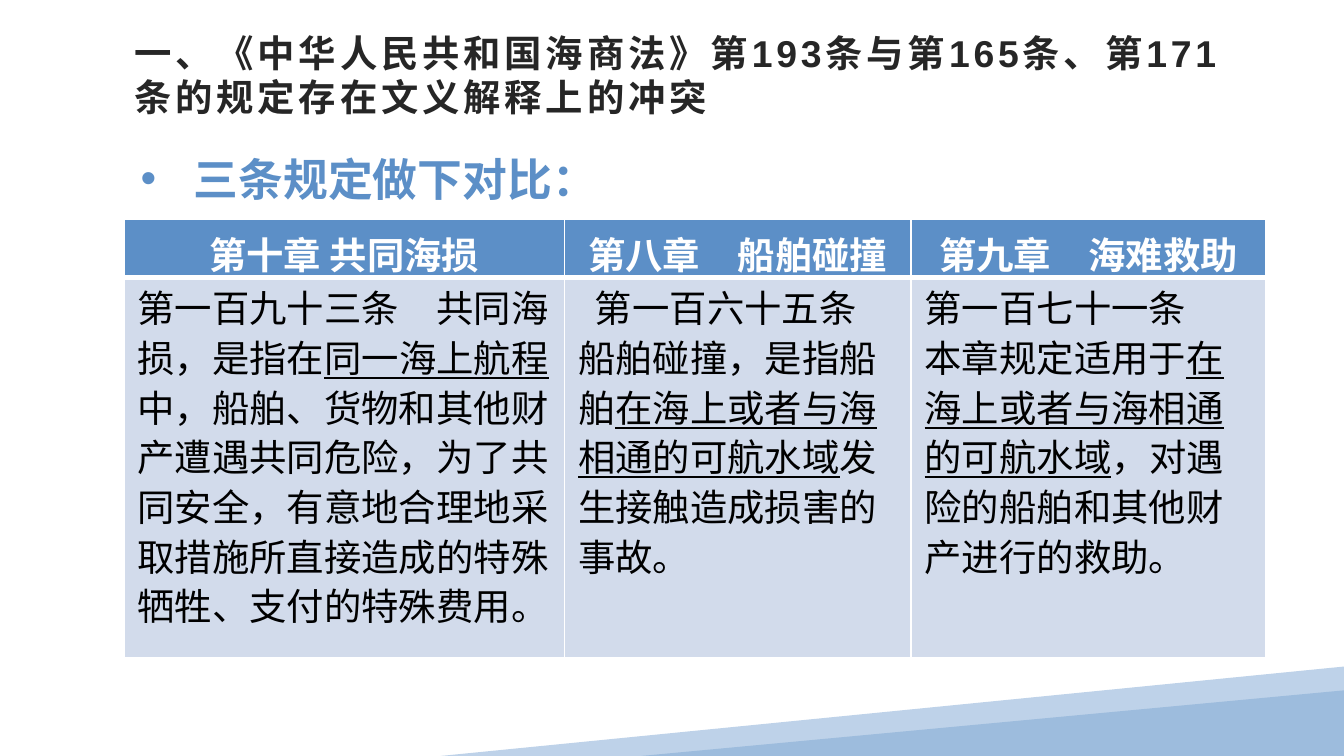
from dataclasses import dataclass

from lxml import etree
from pptx import Presentation
from pptx import util as u
from pptx.dml.color import RGBColor
from pptx.enum import shapes, text
from pptx.oxml import ns
from pptx.util import Cm, Pt


@dataclass(frozen=True)
class Theme:
    latin: str = "Arial"
    cjk: str = "Noto Sans CJK SC"
    title: str = "262626"
    accent: str = "5C8FC7"
    body_fill: str = "D2DBEB"
    wave_light: str = "BED2E9"
    wave_dark: str = "9DBCDD"
    white: str = "FFFFFF"
    black: str = "000000"
    text_size: u.Length = Pt(20)
    lead_size: u.Length = Pt(24)
    body_leading: u.Length = Pt(26.6)


THEME = Theme()


@dataclass(frozen=True)
class Article:
    chapter: str
    before: str
    scope: str  # underlined wording
    after: str
    width: u.Length
    first_indent: u.Length = Cm(0)


ARTICLES = [
    Article("第十章 共同海损", "第一百九十三条　共同海损，是指在", "同一海上航程",
            "中，船舶、货物和其他财产遭遇共同危险，为了共同安全，有意地合理地"
            "采取措施所直接造成的特殊牺牲、支付的特殊费用。", Cm(8.33)),
    Article("第八章　船舶碰撞", "第一百六十五条　船舶碰撞，是指船舶",
            "在海上或者与海相通的可航水域", "发生接触造成损害的事故。",
            Cm(6.55), Cm(0.32)),
    Article("第九章　海难救助", "第一百七十一条　本章规定适用于",
            "在海上或者与海相通的可航水域", "，对遇险的船舶和其他财产进行的救助。",
            Cm(6.71)),
]


def add_run(paragraph, words: str, size: u.Length, color: str, bold: bool = False,
            underline: bool = False, font: str = THEME.cjk):
    run = paragraph.add_run()
    run.text = words
    run.font.size, run.font.bold, run.font.underline = size, bold, underline
    run.font.color.rgb = RGBColor.from_string(color)
    run.font.name = font
    east_asian = etree.Element(ns.qn("a:ea"), typeface=THEME.cjk)
    run.font._element.find(ns.qn("a:latin")).addnext(east_asian)
    return run


def paint(shape, color: str) -> None:
    shape.shadow.inherit = False
    shape.fill.solid()
    shape.fill.fore_color.rgb = RGBColor.from_string(color)
    shape.line.fill.background()


def style_cell(cell, fill: str, top: float, bottom: float) -> None:
    cell.fill.solid()
    cell.fill.fore_color.rgb = RGBColor.from_string(fill)
    props = cell._tc.get_or_add_tcPr()
    sides = {"lnL": 1, "lnR": 1, "lnT": top, "lnB": bottom}
    for place, (side, points) in enumerate(sides.items()):
        border = etree.Element(ns.qn(f"a:{side}"), w=str(Pt(points)))
        solid = etree.SubElement(border, ns.qn("a:solidFill"))
        etree.SubElement(solid, ns.qn("a:srgbClr"), val=THEME.white)
        props.insert(place, border)


def add_wave(slide) -> None:
    builder = slide.shapes.build_freeform(Cm(25.4), Cm(12.6))
    builder.add_line_segments([(Cm(25.4), Cm(14.17)), (Cm(17.09), Cm(14.29)),
                               (Cm(8.33), Cm(14.29))], close=True)
    paint(builder.convert_to_shape(), THEME.wave_light)
    front = slide.shapes.add_shape(shapes.MSO_SHAPE.ISOSCELES_TRIANGLE,
                                   Cm(12.12), Cm(13.05), Cm(13.28), Cm(1.24))
    front.adjustments[0] = 1
    paint(front, THEME.wave_dark)


def add_title(slide) -> None:
    frame = slide.shapes.add_textbox(Cm(2.26), Cm(0.51), Cm(21.67), Cm(1.83)).text_frame
    frame.word_wrap = True
    frame.vertical_anchor = text.MSO_ANCHOR.MIDDLE
    frame.margin_left, frame.margin_right = Cm(0.28), Cm(0.2)
    frame.margin_top = frame.margin_bottom = Cm(0.1)
    heading = frame.paragraphs[0]
    heading.line_spacing = Pt(23.6)
    run = add_run(heading, "一、《中华人民共和国海商法》第193条与第165条、第171条的规定存在文义解释上的冲突",
                  THEME.text_size, THEME.title, bold=True, font=THEME.latin)
    run.font._element.set("spc", "200")


def add_lead(slide) -> None:
    frame = slide.shapes.add_textbox(Cm(1.63), Cm(2.74), Cm(9.91), Cm(1.27)).text_frame
    frame.word_wrap = False
    lead = frame.paragraphs[0]
    lead.alignment = text.PP_ALIGN.LEFT
    props = lead._p.get_or_add_pPr()
    props.set("marL", str(Cm(1.78)))
    props.set("indent", str(-Cm(1)))
    etree.SubElement(props, ns.qn("a:buFont"), typeface=THEME.latin)
    etree.SubElement(props, ns.qn("a:buChar"), char="•")
    add_run(lead, "三条规定做下对比：", THEME.lead_size, THEME.accent, bold=True)


def add_comparison(slide, articles: list[Article]) -> None:
    width = sum(article.width for article in articles)
    table = slide.shapes.add_table(2, len(articles), Cm(2.34), Cm(4.14),
                                   width, Cm(8.28)).table
    table.rows[0].height, table.rows[1].height = Cm(1.09), Cm(7.19)
    for column, article in enumerate(articles):
        table.columns[column].width = article.width

        # Chapter heading
        header = table.cell(0, column)
        style_cell(header, THEME.accent, top=1, bottom=3)
        chapter = header.text_frame.paragraphs[0]
        chapter.alignment = text.PP_ALIGN.CENTER
        add_run(chapter, article.chapter, THEME.text_size, THEME.white, bold=True)

        # Article wording
        body = table.cell(1, column)
        style_cell(body, THEME.body_fill, top=3, bottom=1)
        wording = body.text_frame.paragraphs[0]
        wording.line_spacing = THEME.body_leading
        if article.first_indent:
            wording._p.get_or_add_pPr().set("indent", str(article.first_indent))
        for words in (article.before, article.scope, article.after):
            add_run(wording, words, THEME.text_size, THEME.black,
                    underline=words == article.scope)


def main() -> None:
    deck = Presentation()
    deck.slide_width, deck.slide_height = Cm(25.4), Cm(14.29)
    slide = deck.slides.add_slide(deck.slide_layouts[6])
    add_wave(slide)
    add_title(slide)
    add_comparison(slide, ARTICLES)
    add_lead(slide)
    deck.save("out.pptx")


if __name__ == "__main__":
    main()
